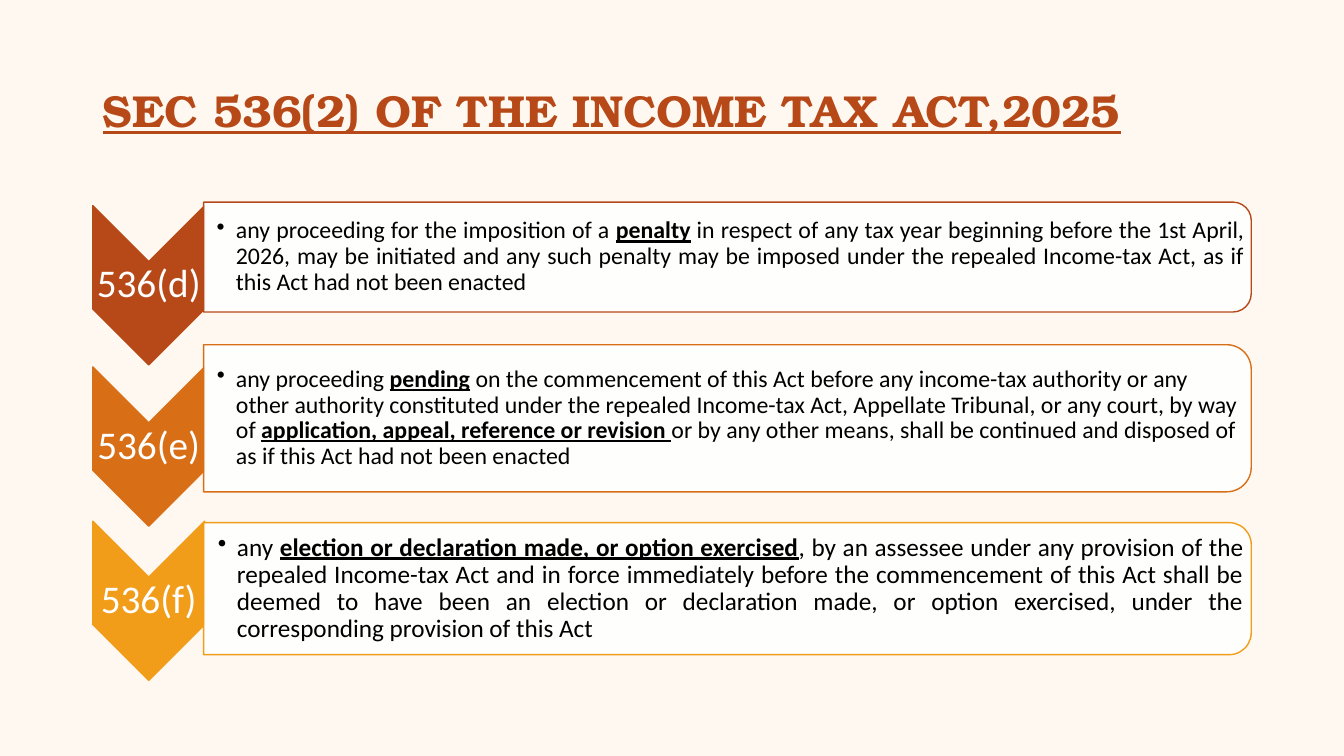
from lxml.etree import SubElement
from pptx import Presentation
from pptx.dml.color import RGBColor
from pptx.enum.shapes import MSO_SHAPE as Shape
from pptx.enum.text import MSO_ANCHOR as Anchor, MSO_AUTO_SIZE as AutoSize, PP_ALIGN as Align
from pptx.oxml.ns import qn
from pptx.util import Inches, Pt

RUST = RGBColor(0xB7, 0x49, 0x19)
ORANGE = RGBColor(0xD8, 0x6E, 0x15)
AMBER = RGBColor(0xF1, 0x9D, 0x19)
CREAM = RGBColor(0xFE, 0xF8, 0xF0)
WHITE = RGBColor(0xFF, 0xFF, 0xFF)
BLACK = RGBColor(0, 0, 0)

TITLE = "SEC 536(2) OF THE INCOME TAX ACT,2025"
CLAUSES = [
    {"label": "536(d)", "color": RUST, "arrow_y": 2.83, "panel_y": 2.55, "height": 1.09,
     "size": 17, "align": Align.JUSTIFY, "inset": 0.13, "text": [
         ("any proceeding for the imposition of a ", False),
         ("penalty", True),
         (" in respect of any tax year beginning before the 1st April, 2026, may be initiated "
          "and any such penalty may be imposed under the repealed Income-tax Act, as if this "
          "Act had not been enacted", False)]},
    {"label": "536(e)", "color": ORANGE, "arrow_y": 4.43, "panel_y": 4.15, "height": 1.46,
     "size": 17, "align": Align.LEFT, "inset": 0.13, "text": [
         ("any proceeding ", False),
         ("pending", True),
         (" on the commencement of this Act before any income-tax authority or any other "
          "authority constituted under the repealed Income-tax Act, Appellate Tribunal, or any "
          "court, by way of ", False),
         ("application, appeal, reference or revision ", True),
         ("or by any other means, shall be continued and disposed of as if this Act had not "
          "been enacted", False)]},
    {"label": "536(f)", "color": AMBER, "arrow_y": 5.96, "panel_y": 5.84, "height": 1.31,
     "size": 18, "align": Align.JUSTIFY, "inset": 0.14, "text": [
         ("any ", False),
         ("election or declaration made, or option exercised", True),
         (", by an assessee under any provision of the repealed Income-tax Act and in force "
          "immediately before the commencement of this Act shall be deemed to have been an "
          "election or declaration made, or option exercised, under the corresponding "
          "provision of this Act", False)]},
]
ARROW_LEFT, ARROW_WIDTH, ARROW_HEIGHT = 0.92, 1.11, 1.58
PANEL_LEFT, PANEL_WIDTH = 2.02, 10.39
LABEL_HEIGHT = 0.47


def add_turned_shape(page, kind, left, middle, width, height, fill, line):
    """Add a shape turned a quarter, sized by how it looks after turning."""
    shape = page.shapes.add_shape(
        kind, Inches(left + (width - height) / 2), Inches(middle - width / 2),
        Inches(height), Inches(width))
    shape.rotation = 90
    shape.shadow.inherit = False
    shape.fill.solid()
    shape.fill.fore_color.rgb = fill
    shape.line.color.rgb = line
    shape.line.width = Pt(1)
    return shape


def add_text_box(page, left, middle, width, height, margins):
    """Add a wrapped text box centred on a height and return its paragraph."""
    box = page.shapes.add_textbox(
        Inches(left), Inches(middle - height / 2), Inches(width), Inches(height))
    frame = box.text_frame
    frame.word_wrap = True
    frame.vertical_anchor = Anchor.MIDDLE
    frame.margin_left, frame.margin_top, frame.margin_right, frame.margin_bottom = map(
        Inches, margins)
    para = frame.paragraphs[0]
    para.line_spacing = 0.9
    return para


def add_span(para, text, font, size, color, strong=False):
    """Add one run, bold and underlined when strong."""
    span = para.add_run()
    span.text = text
    span.font.name = font
    span.font.size = Pt(size)
    span.font.color.rgb = color
    span.font.bold = strong
    span.font.underline = strong


def add_bullet(para):
    """Give a paragraph a hanging round bullet."""
    props = para._p.get_or_add_pPr()
    props.set("marL", str(Inches(0.19)))
    props.set("indent", str(-Inches(0.19)))
    SubElement(props, qn("a:buChar")).set("char", "•")


def add_clause(page, clause):
    """Draw one clause: arrow, label, panel and text."""
    color, height = clause["color"], clause["height"]
    add_turned_shape(page, Shape.CHEVRON, ARROW_LEFT, clause["arrow_y"],
                     ARROW_WIDTH, ARROW_HEIGHT, color, color)
    label = add_text_box(page, ARROW_LEFT, clause["arrow_y"], ARROW_WIDTH, LABEL_HEIGHT,
                         [0.02] * 4)
    label.alignment = Align.CENTER
    add_span(label, clause["label"], "Calibri", 28, WHITE)

    panel = add_turned_shape(page, Shape.ROUND_2_SAME_RECTANGLE, PANEL_LEFT,
                             clause["panel_y"], PANEL_WIDTH, height, WHITE, color)
    tint = panel.fill._xPr.find(qn("a:solidFill"))[0]
    SubElement(tint, qn("a:alpha")).set("val", "90000")
    body = add_text_box(page, PANEL_LEFT, clause["panel_y"], PANEL_WIDTH - 0.05 * height,
                        0.9 * height, [clause["inset"], 0.01, 0.01, 0.01])
    body.alignment = clause["align"]
    add_bullet(body)
    for text, strong in clause["text"]:
        add_span(body, text, "Calibri", clause["size"], BLACK, strong)


def main():
    """Build the slide and save it."""
    deck = Presentation()
    deck.slide_width, deck.slide_height = Inches(13.33), Inches(7.5)
    page = deck.slides.add_slide(deck.slide_layouts[5])
    page.background.fill.solid()
    page.background.fill.fore_color.rgb = CREAM

    title = page.shapes.title
    title.left, title.top, title.width, title.height = map(Inches, (0.92, 0.4, 11.5, 1.45))
    title.text_frame.auto_size = AutoSize.NONE
    title.text_frame.vertical_anchor = Anchor.MIDDLE
    para = title.text_frame.paragraphs[0]
    para.alignment = Align.LEFT
    para.line_spacing = 0.9
    add_span(para, TITLE, "TeX Gyre Bonum", 32, RUST, True)

    for clause in CLAUSES:
        add_clause(page, clause)
    deck.save("out.pptx")


if __name__ == "__main__":
    main()
